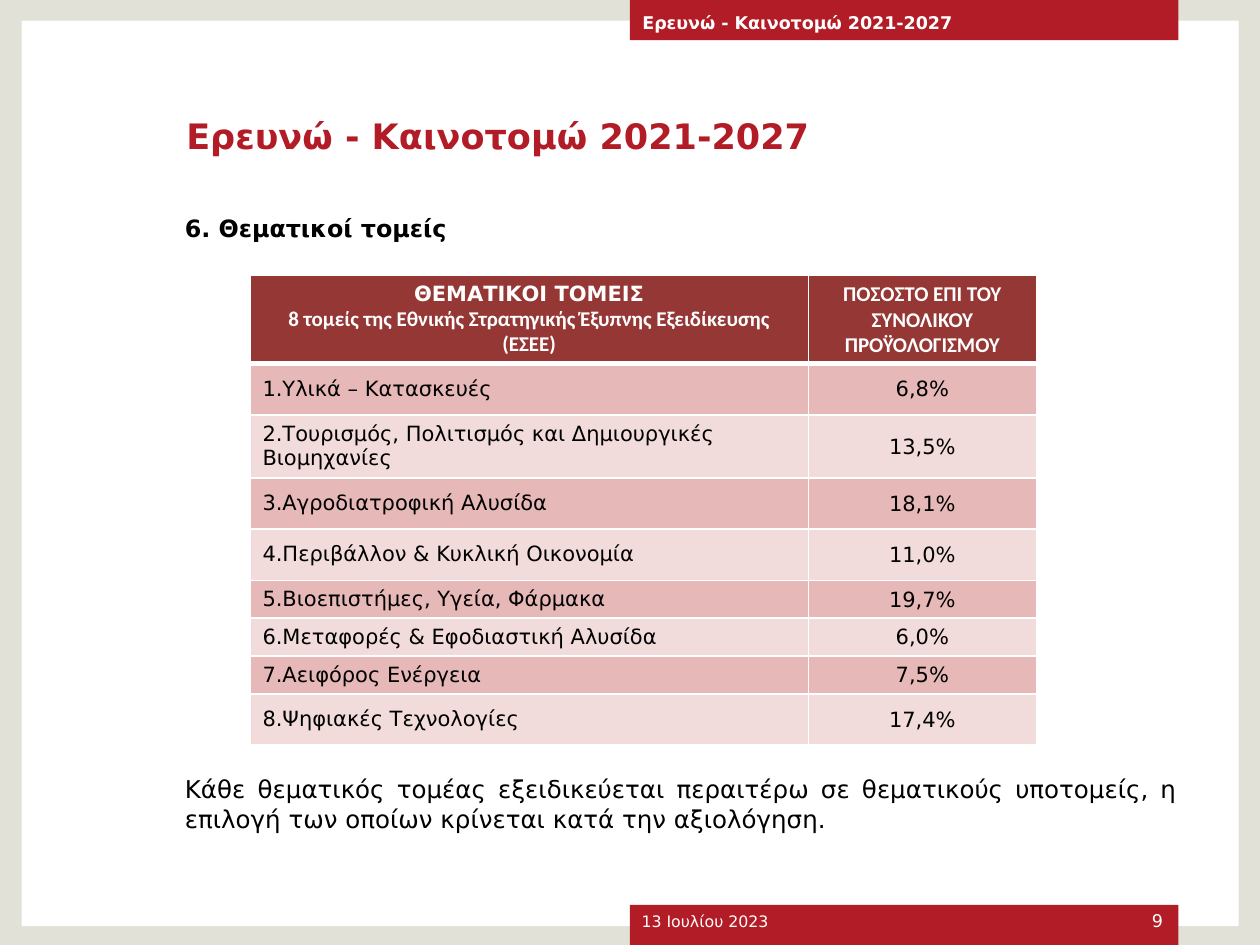
from lxml import etree
from pptx import Presentation
from pptx.dml.color import RGBColor
from pptx.enum.shapes import MSO_SHAPE
from pptx.enum.text import MSO_ANCHOR, PP_ALIGN
from pptx.oxml.ns import qn
from pptx.util import Pt

RECTANGLE = MSO_SHAPE.RECTANGLE
TOP, MIDDLE, BOTTOM = MSO_ANCHOR.TOP, MSO_ANCHOR.MIDDLE, MSO_ANCHOR.BOTTOM
LEFT, CENTER, RIGHT, JUSTIFY = PP_ALIGN.LEFT, PP_ALIGN.CENTER, PP_ALIGN.RIGHT, PP_ALIGN.JUSTIFY
RED, WHITE, BLACK, SAND = "B21C26", "FFFFFF", "000000", "E1E1D7"
HEADER_FILL, BAND_FILLS = "953735", ("E6B9B8", "F2DCDB")
FONT, HEADER_FONT = "DejaVu Sans", "Calibri"
PROGRAMME = "Ερευνώ - Καινοτομώ 2021-2027"
SECTORS = [
    ("Υλικά – Κατασκευές", "6,8%", 29.3),
    ("Τουρισμός, Πολιτισμός και Δημιουργικές Βιομηχανίες", "13,5%", 35.4),
    ("Αγροδιατροφική Αλυσίδα", "18,1%", 29.3),
    ("Περιβάλλον & Κυκλική Οικονομία", "11,0%", 29.3),
    ("Βιοεπιστήμες, Υγεία, Φάρμακα", "19,7%", 21.3),
    ("Μεταφορές & Εφοδιαστική Αλυσίδα", "6,0%", 21.3),
    ("Αειφόρος Ενέργεια", "7,5%", 21.3),
    ("Ψηφιακές Τεχνολογίες", "17,4%", 29.3),
]


def color(value):
    return RGBColor.from_string(value)


class SlideBuilder:
    """Draws the elements of one slide in a shared style."""

    def __init__(self, slide):
        self.slide = slide

    def panel(self, left, top, width, height, fill):
        shape = self.slide.shapes.add_shape(RECTANGLE, Pt(left), Pt(top), Pt(width), Pt(height))
        shape.shadow.inherit = False
        shape.fill.solid()
        shape.fill.fore_color.rgb = color(fill)
        shape.line.fill.background()

    def format(self, paragraph, size, ink, bold=False, align=LEFT, font=FONT):
        paragraph.alignment = align
        for run in paragraph.runs:
            run.font.name = font
            run.font.size = Pt(size)
            run.font.bold = bold
            run.font.color.rgb = color(ink)

    def text(self, box, text, size, ink, anchor, bold=False, align=LEFT, spacing=None):
        shape = self.slide.shapes.add_textbox(*(Pt(length) for length in box))
        frame = shape.text_frame
        frame.word_wrap = True
        frame.vertical_anchor = anchor
        frame.text = text
        paragraph = frame.paragraphs[0]
        paragraph.line_spacing = spacing
        self.format(paragraph, size, ink, bold, align)

    def borders(self, cell, bottom):
        properties = cell._tc.get_or_add_tcPr()
        widths = {"a:lnL": 1, "a:lnR": 1, "a:lnT": 1, "a:lnB": bottom}
        for index, (tag, width) in enumerate(widths.items()):
            line = etree.Element(qn(tag), w=str(Pt(width)))
            fill = etree.SubElement(line, qn("a:solidFill"))
            etree.SubElement(fill, qn("a:srgbClr"), val=WHITE)
            properties.insert(index, line)

    def cell(self, cell, text, fill, ink, align, fonts=(FONT,), bold=False, bottom=1):
        cell.fill.solid()
        cell.fill.fore_color.rgb = color(fill)
        cell.vertical_anchor = MIDDLE
        cell.text_frame.text = text
        for paragraph, font in zip(cell.text_frame.paragraphs, fonts):
            self.format(paragraph, 12, ink, bold, align, font)
        self.borders(cell, bottom)

    def table(self, left, top, widths, headers, header_height, sectors):
        heights = [header_height] + [height for _, _, height in sectors]
        table = self.slide.shapes.add_table(
            len(heights), len(widths), Pt(left), Pt(top), Pt(sum(widths)), Pt(sum(heights))
        ).table
        for column, width in zip(table.columns, widths):
            column.width = Pt(width)
        for row, height in zip(table.rows, heights):
            row.height = Pt(height)
        for column, (text, fonts) in enumerate(headers):
            self.cell(table.cell(0, column), text, HEADER_FILL, WHITE, CENTER, fonts, True, 3)
        for number, (name, share, _) in enumerate(sectors, 1):
            fill = BAND_FILLS[(number - 1) % 2]
            self.cell(table.cell(number, 0), f"{number}.{name}", fill, BLACK, LEFT)
            share_cell = table.cell(number, 1)
            share_cell.margin_left = share_cell.margin_right = share_cell.margin_top = Pt(0.7)
            share_cell.margin_bottom = Pt(0)
            self.cell(share_cell, share, fill, BLACK, CENTER)


def main():
    presentation = Presentation()
    presentation.slide_width, presentation.slide_height = Pt(720), Pt(540)
    builder = SlideBuilder(presentation.slides.add_slide(presentation.slide_layouts[6]))

    builder.panel(0, 0, 720, 540, SAND)
    builder.panel(12.4, 11.8, 695.4, 517.4, WHITE)
    for top in (517, 0):
        builder.panel(360, top, 313.4, 23, RED)

    builder.text((99.4, 43.2, 581, 68.4), PROGRAMME, 20, RED, MIDDLE, bold=True)
    builder.text((98.6, 111.6, 581, 30.2), "6. Θεματικοί τομείς", 13.6, BLACK, BOTTOM,
                 bold=True, spacing=1.3)
    builder.text((359.5, 514, 168, 21.6), "13 Ιουλίου 2023", 9, WHITE, BOTTOM)
    builder.text((360, 1.4, 313.4, 23), PROGRAMME, 10, WHITE, MIDDLE, bold=True)
    builder.text((607.7, 514, 64, 21.6), "9", 10, WHITE, BOTTOM, align=RIGHT)
    builder.text((98.6, 439, 581.4, 40),
                 "Κάθε θεματικός τομέας εξειδικεύεται περαιτέρω σε θεματικούς υποτομείς, "
                 "η επιλογή των οποίων κρίνεται κατά την αξιολόγηση.",
                 14, BLACK, TOP, align=JUSTIFY)
    headers = [
        ("ΘΕΜΑΤΙΚΟΙ ΤΟΜΕΙΣ\n8 τομείς της Εθνικής Στρατηγικής Έξυπνης Εξειδίκευσης (ΕΣΕΕ)",
         (FONT, HEADER_FONT)),
        ("ΠΟΣΟΣΤΟ ΕΠΙ ΤΟΥ ΣΥΝΟΛΙΚΟΥ ΠΡΟΫΟΛΟΓΙΣΜΟΥ", (HEADER_FONT,)),
    ]
    builder.table(142.8, 157.3, (319.2, 130.2), headers, 50.4, SECTORS)

    presentation.save("out.pptx")


if __name__ == "__main__":
    main()
